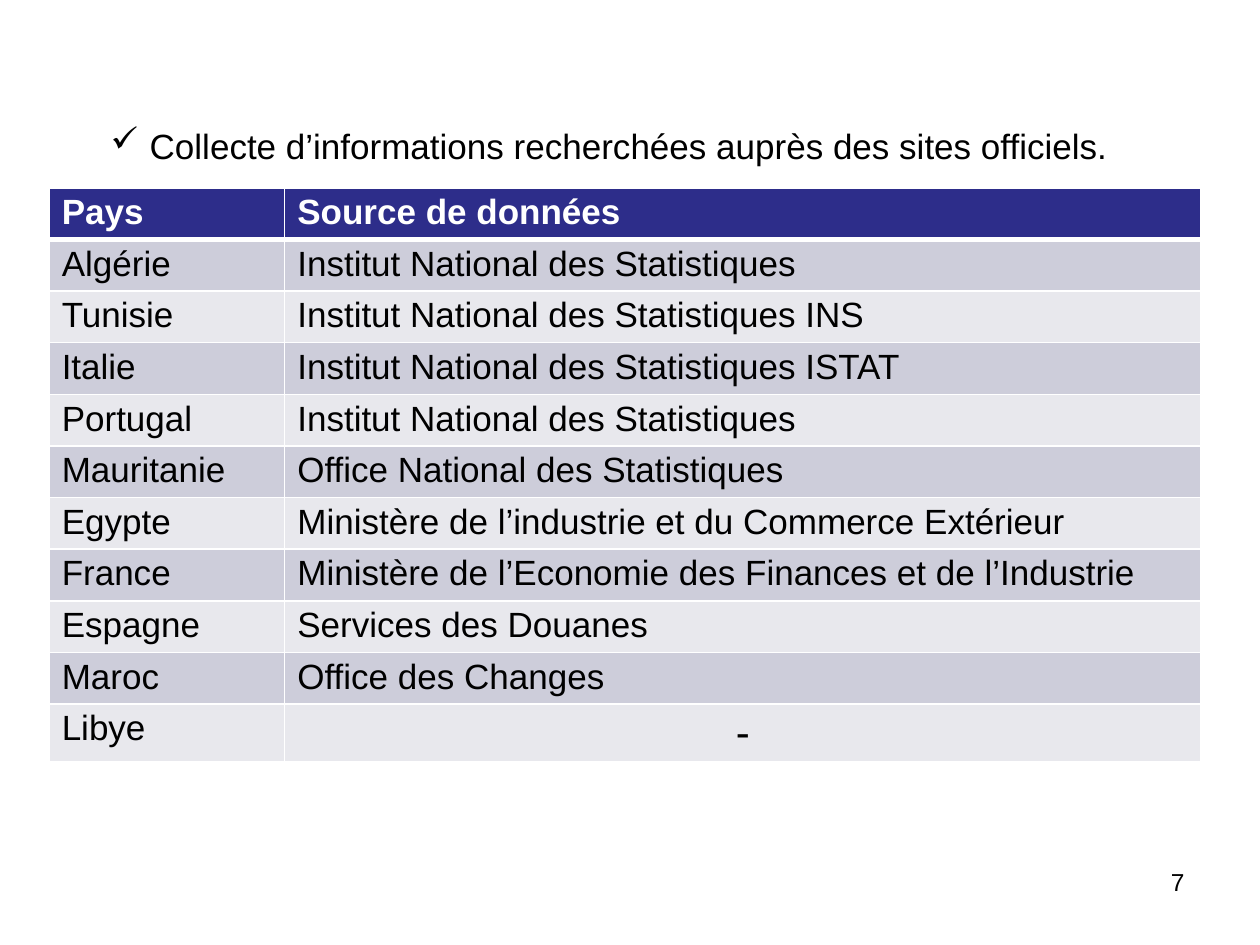
from lxml import etree
from pptx import Presentation
from pptx import util as u
from pptx.dml.color import RGBColor
from pptx.enum import text
from pptx.oxml import ns

HEADING = "Collecte d’informations recherchées auprès des sites officiels."
PAGE_NUMBER = "7"
SOURCES = [
    ("Pays", "Source de données"),
    ("Algérie", "Institut National des Statistiques"),
    ("Tunisie", "Institut National des Statistiques INS"),
    ("Italie", "Institut National des Statistiques ISTAT"),
    ("Portugal", "Institut National des Statistiques"),
    ("Mauritanie", "Office National des Statistiques"),
    ("Egypte", "Ministère de l’industrie et du Commerce Extérieur"),
    ("France", "Ministère de l’Economie des Finances et de l’Industrie"),
    ("Espagne", "Services des Douanes"),
    ("Maroc", "Office des Changes"),
    ("Libye", "-"),
]
COLUMN_WIDTHS = (1.87, 7.27)
ROW_HEIGHT, LAST_ROW_HEIGHT = 0.41, 0.46
HEADER_FILL, BAND_FILLS = "2D2D8A", ("E8E8ED", "CDCDDA")
BLACK, WHITE = "000000", "FFFFFF"
CELL_MARGINS = {
    "margin_left": u.Inches(0.1), "margin_right": u.Inches(0.1),
    "margin_top": u.Inches(0.04), "margin_bottom": u.Inches(0.04),
}


def color(value):
    return RGBColor.from_string(value)


def write(paragraph, words, size=20, ink=BLACK, bold=False, align=text.PP_ALIGN.LEFT):
    paragraph.text = words
    paragraph.alignment = align
    formats = {"name": "Arial", "size": u.Pt(size), "bold": bold}
    for name, value in formats.items():
        setattr(paragraph.font, name, value)
    paragraph.font.color.rgb = color(ink)


def add_text_box(slide, left, top, width, height):
    box = slide.shapes.add_textbox(*map(u.Inches, (left, top, width, height)))
    box.text_frame.word_wrap = True
    return box.text_frame.paragraphs[0]


def add_bullet(paragraph, symbol, indent):
    properties = paragraph._p.get_or_add_pPr()
    properties.set("marL", str(u.Inches(indent)))
    properties.set("indent", str(-u.Inches(indent)))
    etree.SubElement(properties, ns.qn("a:buChar"), char=symbol)


def add_borders(cell, widths):
    properties = cell._tc.get_or_add_tcPr()
    for position, (side, width) in enumerate(widths.items()):
        line = etree.Element(ns.qn(f"a:ln{side}"), w=str(u.Pt(width)))
        fill = etree.SubElement(line, ns.qn("a:solidFill"))
        etree.SubElement(fill, ns.qn("a:srgbClr"), val=WHITE)
        properties.insert(position, line)


def add_sources_table(slide):
    heights = [ROW_HEIGHT] * (len(SOURCES) - 1) + [LAST_ROW_HEIGHT]
    size = (sum(COLUMN_WIDTHS), sum(heights))
    frame = slide.shapes.add_table(
        len(SOURCES), len(COLUMN_WIDTHS), *map(u.Inches, (0.39, 1.49, *size)))
    table = frame.table
    for column, width in zip(table.columns, COLUMN_WIDTHS):
        column.width = u.Inches(width)
    for index, (entries, height) in enumerate(zip(SOURCES, heights)):
        table.rows[index].height = u.Inches(height)
        header = index == 0
        for cell, words in zip(table.rows[index].cells, entries):
            for name, value in CELL_MARGINS.items():
                setattr(cell, name, value)
            cell.fill.solid()
            cell.fill.fore_color.rgb = color(HEADER_FILL if header else BAND_FILLS[index % 2])
            add_borders(cell, {"L": 1, "R": 1, "T": 3 if index == 1 else 1, "B": 3 if header else 1})
            paragraph = cell.text_frame.paragraphs[0]
            if words == "-":
                write(paragraph, words, size=24, align=text.PP_ALIGN.CENTER)
            else:
                write(paragraph, words, ink=WHITE if header else BLACK, bold=header)


def main():
    presentation = Presentation()
    presentation.slide_width, presentation.slide_height = u.Inches(10), u.Inches(7.5)
    slide = presentation.slides.add_slide(presentation.slide_layouts[6])
    add_sources_table(slide)
    heading = add_text_box(slide, 0.78, 0.94, 8.75, 0.44)
    add_bullet(heading, "✓", 0.31)
    write(heading, HEADING)
    number = add_text_box(slide, 7.17, 6.83, 2.33, 0.52)
    write(number, PAGE_NUMBER, size=14, align=text.PP_ALIGN.RIGHT)
    presentation.save("out.pptx")


if __name__ == "__main__":
    main()
